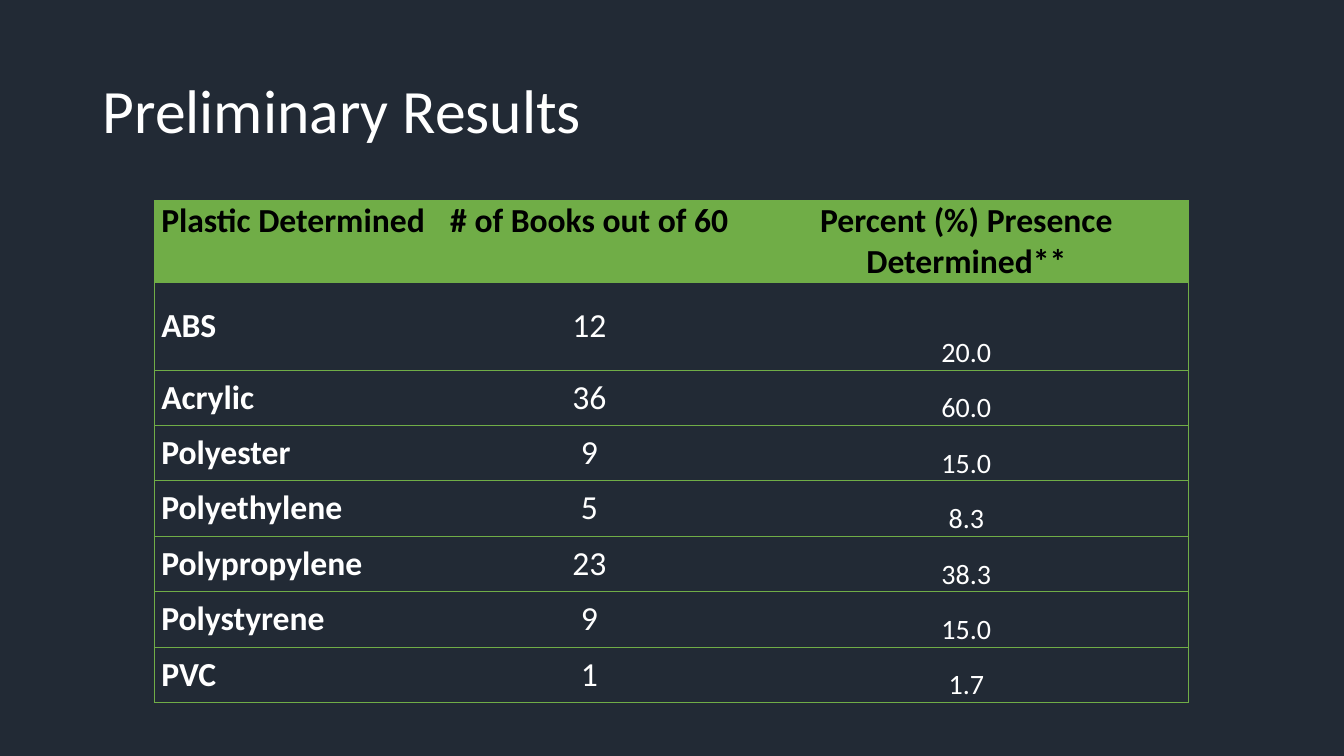
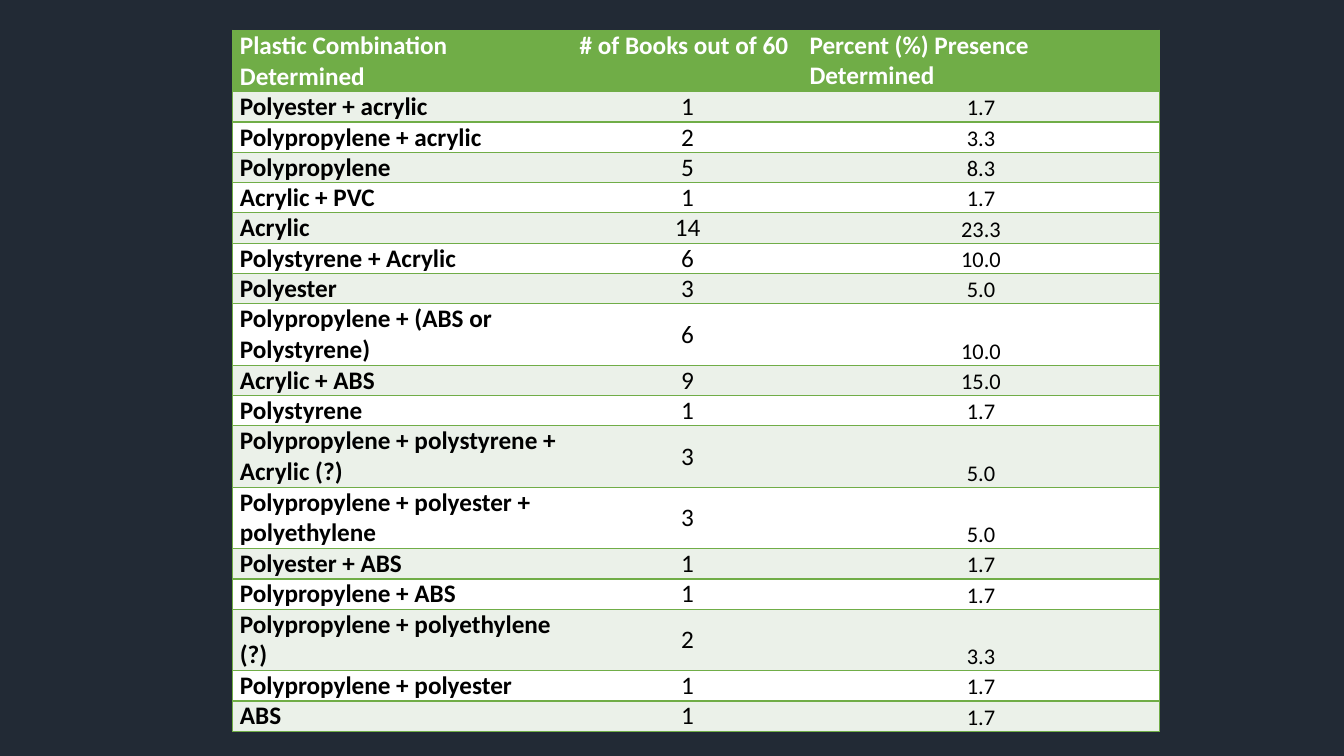
from lxml import etree
from pptx import Presentation
from pptx import util as u
from pptx.dml.color import RGBColor
from pptx.enum import text
from pptx.oxml import ns

NAVY = RGBColor(0x22, 0x2A, 0x35)
GREEN = RGBColor(0x70, 0xAD, 0x47)
PALE = RGBColor(0xEB, 0xF1, 0xE9)
WHITE = RGBColor(0xFF, 0xFF, 0xFF)
BLACK = RGBColor(0x00, 0x00, 0x00)
FONT = "Calibri"
LEFT, CENTER = text.PP_ALIGN.LEFT, text.PP_ALIGN.CENTER
TOP, MIDDLE, BOTTOM = text.MSO_ANCHOR.TOP, text.MSO_ANCHOR.MIDDLE, text.MSO_ANCHOR.BOTTOM

PLASTICS = [
    ("Plastic Determined", "# of Books out of 60", "Percent (%) Presence Determined**"),
    ("ABS", "12", "20.0"),
    ("Acrylic", "36", "60.0"),
    ("Polyester", "9", "15.0"),
    ("Polyethylene", "5", "8.3"),
    ("Polypropylene", "23", "38.3"),
    ("Polystyrene", "9", "15.0"),
    ("PVC", "1", "1.7"),
]
COMBINATIONS = [
    ("Plastic Combination Determined", "# of Books out of 60", "Percent (%) Presence Determined"),
    ("Polyester + acrylic", "1", "1.7"),
    ("Polypropylene + acrylic", "2", "3.3"),
    ("Polypropylene", "5", "8.3"),
    ("Acrylic + PVC", "1", "1.7"),
    ("Acrylic", "14", "23.3"),
    ("Polystyrene + Acrylic", "6", "10.0"),
    ("Polyester", "3", "5.0"),
    ("Polypropylene + (ABS or Polystyrene)", "6", "10.0"),
    ("Acrylic + ABS", "9", "15.0"),
    ("Polystyrene", "1", "1.7"),
    ("Polypropylene + polystyrene + Acrylic (?)", "3", "5.0"),
    ("Polypropylene + polyester + polyethylene", "3", "5.0"),
    ("Polyester + ABS", "1", "1.7"),
    ("Polypropylene + ABS", "1", "1.7"),
    ("Polypropylene + polyethylene (?)", "2", "3.3"),
    ("Polypropylene + polyester", "1", "1.7"),
    ("ABS", "1", "1.7"),
]


def write(frame, words, size, color, bold=False, align=LEFT, spacing=None):
    """Write one formatted paragraph into a text frame."""
    frame.word_wrap = True
    para = frame.paragraphs[0]
    para.alignment = align
    para.line_spacing = spacing
    span = para.add_run()
    span.text = words
    span.font.name = FONT
    span.font.size = u.Pt(size)
    span.font.bold = bold
    span.font.color.rgb = color


def add_title(page, words, left, top, width, height):
    """Place a slide title, centred vertically in its box."""
    box = page.shapes.add_textbox(*map(u.Inches, (left, top, width, height)))
    box.text_frame.vertical_anchor = MIDDLE
    write(box.text_frame, words, 44, WHITE, spacing=0.9)


def set_borders(cell, sides, weight):
    """Draw green borders on the named sides and clear the others."""
    properties = cell._tc.get_or_add_tcPr()
    for side in "LRTB":
        line = etree.SubElement(properties, ns.qn(f"a:ln{side}"), w=str(u.Pt(weight)))
        if side in sides:
            fill = etree.SubElement(line, ns.qn("a:solidFill"))
            etree.SubElement(fill, ns.qn("a:srgbClr"), val=str(GREEN))
        else:
            etree.SubElement(line, ns.qn("a:noFill"))


def fill_cell(cell, color):
    """Fill a cell, or leave it clear when there is no colour."""
    if color is None:
        cell.fill.background()
    else:
        cell.fill.solid()
        cell.fill.fore_color.rgb = color


def add_results(page, left, top, widths, heights, rows, size, value_size, header_color,
                header_aligns, body_color, bands, weight):
    """Place a results table with a green header and ruled rows."""
    box = page.shapes.add_table(len(rows), len(widths), u.Inches(left), u.Inches(top),
                                u.Inches(sum(widths)), u.Inches(sum(heights)))
    table = box.table
    table.horz_banding = False
    for column, width in zip(table.columns, widths):
        column.width = u.Inches(width)
    for row, height in zip(table.rows, heights):
        row.height = u.Inches(height)
    for i, record in enumerate(rows):
        for j, words in enumerate(record):
            cell = table.cell(i, j)
            cell.margin_left = cell.margin_right = u.Inches(0.07)
            cell.margin_top = cell.margin_bottom = 0
            set_borders(cell, ("LTB", "TB", "RTB")[j], weight)
            if i == 0:
                fill_cell(cell, GREEN)
                cell.vertical_anchor = (TOP, TOP, BOTTOM)[j]
                write(cell.text_frame, words, size, header_color, True, header_aligns[j])
            else:
                fill_cell(cell, bands[(i - 1) % len(bands)])
                cell.vertical_anchor = (MIDDLE, MIDDLE, BOTTOM)[j]
                write(cell.text_frame, words, (size, size, value_size)[j], body_color,
                      j == 0, (LEFT, CENTER, CENTER)[j])


def add_plastics_slide(deck):
    """Add the slide of single plastics found."""
    page = deck.slides.add_slide(deck.slide_layouts[6])
    add_title(page, "Preliminary Results", 0.92, 0.4, 11.5, 1.45)
    add_results(page, 1.53, 1.99, (2.78, 3.07, 4.41), [0.81, 0.87] + [0.55] * 6, PLASTICS,
                size=24, value_size=20, header_color=BLACK,
                header_aligns=(LEFT, CENTER, CENTER), body_color=WHITE,
                bands=(None,), weight=0.5)


def add_combinations_slide(deck):
    """Add the slide of plastic combinations found."""
    page = deck.slides.add_slide(deck.slide_layouts[6])
    heights = [0.61 if len(record[0]) > 25 else 0.3 for record in COMBINATIONS]
    add_results(page, 2.31, 0.3, (3.37, 2.28, 3.54), heights, COMBINATIONS,
                size=18, value_size=16, header_color=WHITE,
                header_aligns=(LEFT, LEFT, LEFT), body_color=BLACK,
                bands=(PALE, WHITE), weight=1)


def main():
    """Build and save the deck."""
    deck = Presentation()
    deck.slide_width, deck.slide_height = u.Inches(13.33), u.Inches(7.5)
    backdrop = deck.slide_master.background.fill
    backdrop.solid()
    backdrop.fore_color.rgb = NAVY
    add_plastics_slide(deck)
    add_combinations_slide(deck)
    deck.save("out.pptx")


if __name__ == "__main__":
    main()
